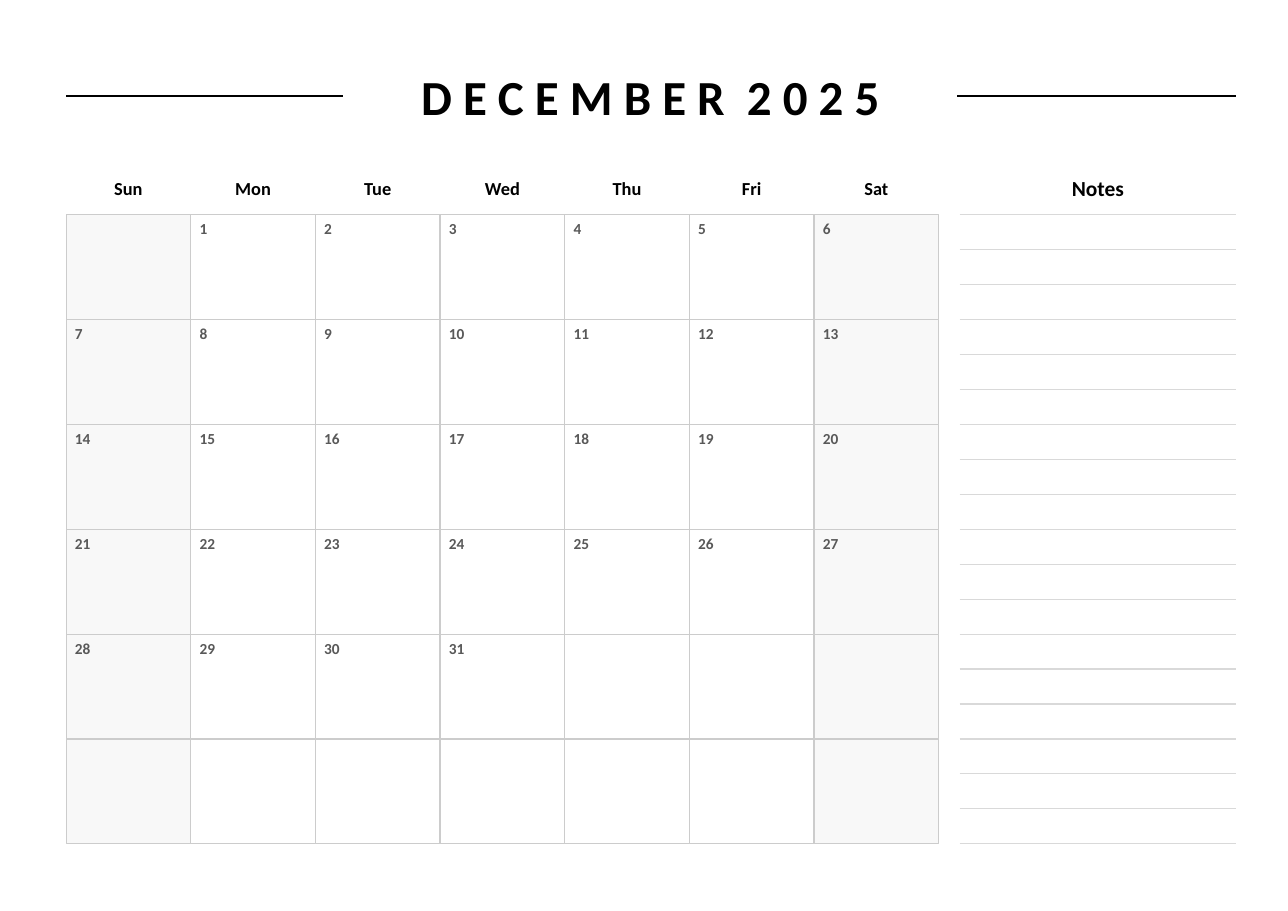
from dataclasses import dataclass

import pptx
import pptx.dml.color
import pptx.enum.shapes
import pptx.enum.text
import pptx.oxml.ns
import pptx.util
from lxml import etree

EMU_PER_PX = 9144  # 100 px to the inch
FONT = "Calibri"
COLORS = {
    "ink": "000000",
    "day": "595959",
    "weekend": "F8F8F8",
    "weekday": "FFFFFF",
    "grid": "CCCCCC",
    "rule": "D9D9D9",
}
ALIGN = pptx.enum.text.PP_ALIGN
ANCHOR = pptx.enum.text.MSO_ANCHOR

WEEKDAYS = ["Sun", "Mon", "Tue", "Wed", "Thu", "Fri", "Sat"]
WEEKS = 6
FIRST_COLUMN = 1  # the month starts on a Monday
DAYS = 31
GRID_LEFT, GRID_TOP, GRID_WIDTH, GRID_HEIGHT = 60, 195, 792, 571
HEADER_TOP, HEADER_HEIGHT = 147, 48
NOTES_LEFT, NOTES_RIGHT, NOTE_SPACES = 871, 1122, 18
TITLE_RULE_Y = 87
CELL_WIDTH = GRID_WIDTH / len(WEEKDAYS)
CELL_HEIGHT = GRID_HEIGHT / WEEKS


@dataclass(frozen=True)
class Box:
    left: float
    top: float
    width: float
    height: float


@dataclass(frozen=True)
class TextStyle:
    size: int
    color: str = "ink"
    align: ALIGN = ALIGN.CENTER
    anchor: ANCHOR = ANCHOR.MIDDLE
    insets: tuple[int, int, int, int] = (10, 10, 10, 10)


@dataclass(frozen=True)
class Rule:
    left: float
    right: float
    y: float
    color: str
    weight: float


TITLE = TextStyle(32, anchor=ANCHOR.TOP, insets=(0, 0, 0, 0))
WEEKDAY = TextStyle(12)
NOTES = TextStyle(14)
DAY = TextStyle(10, color="day", align=ALIGN.LEFT, insets=(8, 4, 0, 4))


def px(length: float) -> pptx.util.Emu:
    return pptx.util.Emu(round(length * EMU_PER_PX))


def rgb(name: str) -> pptx.dml.color.RGBColor:
    return pptx.dml.color.RGBColor.from_string(COLORS[name])


def place(box: Box) -> list[pptx.util.Emu]:
    return [px(box.left), px(box.top), px(box.width), px(box.height)]


def cell_box(row: int, column: int) -> Box:
    return Box(GRID_LEFT + column * CELL_WIDTH, GRID_TOP + row * CELL_HEIGHT,
               CELL_WIDTH, CELL_HEIGHT)


def add_text(slide: pptx.slide.Slide, box: Box, text: str, style: TextStyle) -> None:
    frame = slide.shapes.add_textbox(*place(box)).text_frame
    frame.word_wrap = True
    frame.vertical_anchor = style.anchor
    (frame.margin_left, frame.margin_top,
     frame.margin_right, frame.margin_bottom) = map(px, style.insets)
    frame.text = text
    paragraph = frame.paragraphs[0]
    paragraph.alignment = style.align
    font = paragraph.runs[0].font
    font.name = FONT
    font.size = pptx.util.Pt(style.size)
    font.bold = True
    font.color.rgb = rgb(style.color)


def add_cell(slide: pptx.slide.Slide, box: Box, fill: str) -> None:
    shape = slide.shapes.add_shape(
        pptx.enum.shapes.MSO_SHAPE.RECTANGLE, *place(box))
    shape.shadow.inherit = False
    shape.fill.solid()
    shape.fill.fore_color.rgb = rgb(fill)
    shape.line.color.rgb = rgb("grid")
    shape.line.width = pptx.util.Pt(0.75)


def add_rule(slide: pptx.slide.Slide, rule: Rule) -> None:
    connector = slide.shapes.add_connector(
        pptx.enum.shapes.MSO_CONNECTOR.STRAIGHT,
        px(rule.left), px(rule.y), px(rule.right), px(rule.y))
    connector.line.color.rgb = rgb(rule.color)
    connector.line.width = pptx.util.Pt(rule.weight)
    etree.SubElement(connector._element.spPr, pptx.oxml.ns.qn("a:effectLst"))


def add_title(slide: pptx.slide.Slide) -> None:
    add_text(slide, Box(212, 60, 757, 54), "D E C E M B E R  2 0 2 5", TITLE)
    for left, right in ((GRID_LEFT, 311), (869, NOTES_RIGHT)):
        add_rule(slide, Rule(left, right, TITLE_RULE_Y, "ink", 1.5))


def add_calendar(slide: pptx.slide.Slide) -> None:
    # Weekday headings
    for column, name in enumerate(WEEKDAYS):
        left = cell_box(0, column).left
        add_text(slide, Box(left, HEADER_TOP, CELL_WIDTH, HEADER_HEIGHT), name, WEEKDAY)

    # Day cells, with shaded weekends
    for row in range(WEEKS):
        for column, name in enumerate(WEEKDAYS):
            fill = "weekend" if name in ("Sun", "Sat") else "weekday"
            add_cell(slide, cell_box(row, column), fill)

    # Day numbers
    for day in range(1, DAYS + 1):
        row, column = divmod(day - 1 + FIRST_COLUMN, len(WEEKDAYS))
        cell = cell_box(row, column)
        add_text(slide, Box(cell.left, cell.top, 38, 25), str(day), DAY)


def add_notes_column(slide: pptx.slide.Slide) -> None:
    heading = Box(NOTES_LEFT, HEADER_TOP, NOTES_RIGHT - NOTES_LEFT, HEADER_HEIGHT)
    add_text(slide, heading, "Notes", NOTES)
    for index in range(NOTE_SPACES + 1):
        y = GRID_TOP + index * GRID_HEIGHT / NOTE_SPACES
        add_rule(slide, Rule(NOTES_LEFT, NOTES_RIGHT, y, "rule", 0.75))


def main() -> None:
    presentation = pptx.Presentation()
    presentation.slide_width = px(1169)
    presentation.slide_height = px(827)
    slide = presentation.slides.add_slide(presentation.slide_layouts[6])
    add_title(slide)
    add_calendar(slide)
    add_notes_column(slide)
    presentation.save("out.pptx")


if __name__ == "__main__":
    main()
